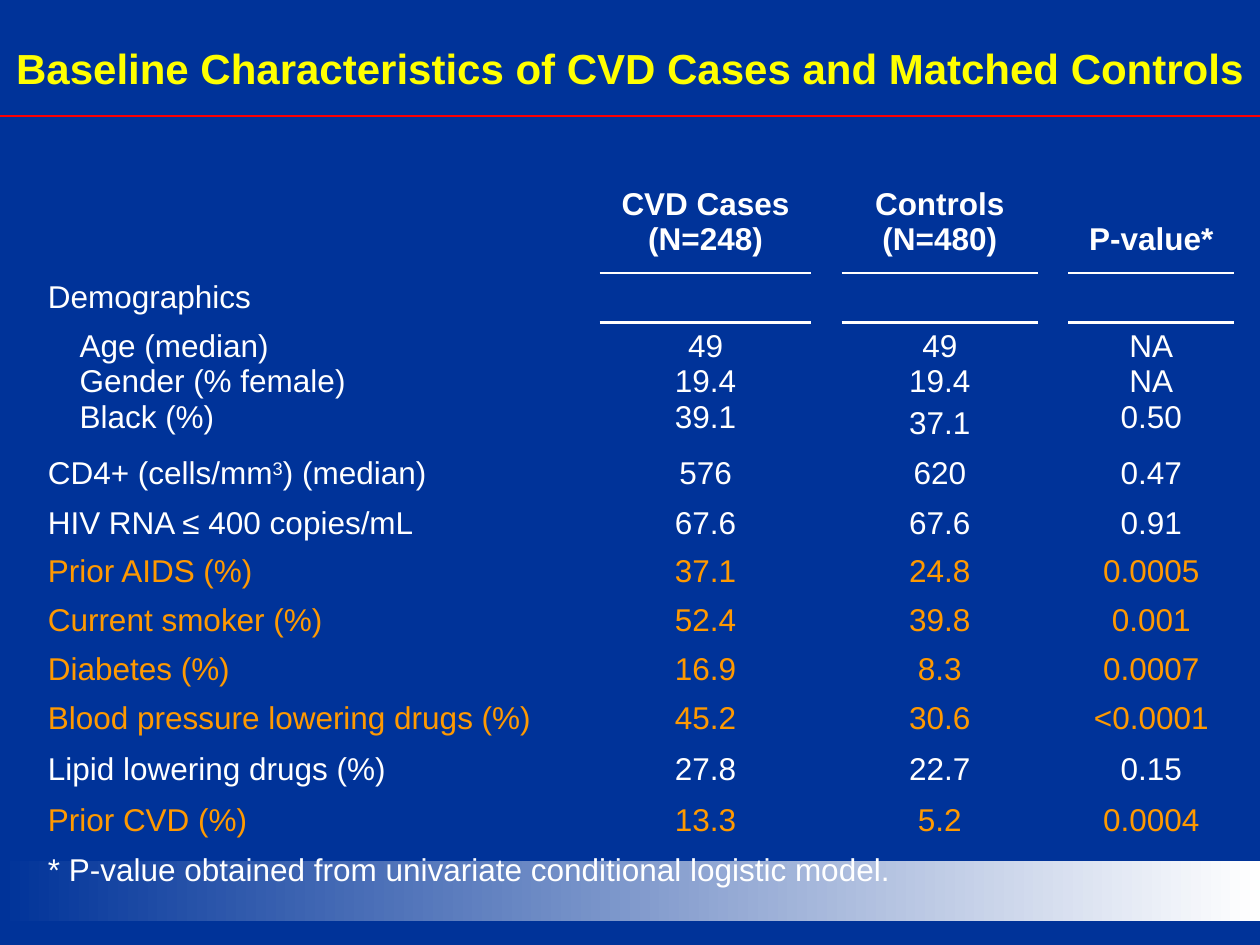
from dataclasses import dataclass
from lxml.etree import SubElement
from pptx import Presentation
from pptx.dml.color import RGBColor
from pptx.enum.shapes import MSO_CONNECTOR, MSO_SHAPE
from pptx.enum.text import MSO_ANCHOR, MSO_AUTO_SIZE, PP_ALIGN
from pptx.oxml import parse_xml
from pptx.oxml.ns import nsdecls, qn
from pptx.slide import Slide
from pptx.util import Cm, Pt

NAVY = RGBColor(0x00, 0x33, 0x99)
WHITE = RGBColor(0xFF, 0xFF, 0xFF)
YELLOW = RGBColor(0xFF, 0xFF, 0x00)
ORANGE = RGBColor(0xFF, 0x99, 0x00)
RED = RGBColor(0xFF, 0x00, 0x00)
PLAIN = "{2D5ABB26-0587-4C30-8999-92F81FD0307C}"  # no style, no grid

COLS = [10.77, 0.58, 4.27, 0.58, 3.96, 0.58, 3.35]
HIGH = [1.9, 0.99, 2.57, 0.99, 0.94, 0.97, 0.97, 0.99] + [1.02] * 4
# Lists hold paragraphs; carets enclose superscripts.
ROWS = [
    (WHITE, "", "CVD Cases\n(N=248)", "Controls\n(N=480)", "P-value*"),
    (WHITE, "Demographics", "", "", ""),
    (WHITE, "Age (median)\nGender (% female)\nBlack (%)", "49\n19.4\n39.1",
     ["49\n19.4", "37.1"], "NA\nNA\n0.50"),
    (WHITE, "CD4+ (cells/mm^3^) (median)", "576", "620", "0.47"),
    (WHITE, "HIV RNA ≤ 400 copies/mL", "67.6", "67.6", "0.91"),
    (ORANGE, "Prior AIDS (%)", "37.1", "24.8", "0.0005"),
    (ORANGE, "Current smoker (%)", "52.4", "39.8", "0.001"),
    (ORANGE, "Diabetes (%)", "16.9", "8.3", "0.0007"),
    (ORANGE, "Blood pressure lowering drugs (%)", "45.2", "30.6", "<0.0001"),
    (WHITE, "Lipid lowering drugs (%)", "27.8", "22.7", "0.15"),
    (ORANGE, "Prior CVD (%)", "13.3", "5.2", "0.0004"),
    (WHITE, "* P-value obtained from univariate conditional logistic model.",
     "", "", ""),
]


def put(item, form):
    for name, value in form.items():
        setattr(item, name, value)


def edge(cell, side):
    """Draw a white rule on one side of a cell (lnT or lnB)."""
    props = cell._tc.get_or_add_tcPr()
    line = parse_xml(
        f'<a:{side} {nsdecls("a")} w="{Pt(1.5)}"><a:solidFill>'
        f'<a:srgbClr val="{WHITE}"/></a:solidFill></a:{side}>')
    props.insert(0, line)


@dataclass
class Deck:
    slide: Slide
    face: str = "Arial"

    def label(self, frame, text, size, tone, bold=False, align=PP_ALIGN.LEFT):
        paras = text if isinstance(text, list) else [text]
        for i, para in enumerate(paras):
            p = frame.add_paragraph() if i else frame.paragraphs[0]
            p.alignment = align
            if i:
                p.space_before = Pt(size * 0.2)
            for j, line in enumerate(para.split("\n")):
                if j:
                    p.add_line_break()
                for k, part in enumerate(line.split("^")):
                    run = p.add_run()
                    run.text = part
                    put(run.font, {"name": self.face, "size": Pt(size),
                                   "bold": bold})
                    run.font.color.rgb = tone
                    if k % 2:
                        run.font._element.set("baseline", "30000")

    def title(self, text):
        box = self.slide.shapes.title
        put(box, {"left": Cm(0), "top": Cm(0.25),
                  "width": Cm(25.4), "height": Cm(3.18)})
        put(box.text_frame, {
            "margin_left": 0, "margin_right": 0, "margin_top": Cm(0.13),
            "margin_bottom": Cm(1.1), "word_wrap": True,
            "auto_size": MSO_AUTO_SIZE.NONE,
            "vertical_anchor": MSO_ANCHOR.MIDDLE})
        self.label(box.text_frame, text, 24, YELLOW, True, PP_ALIGN.CENTER)

    def band(self, top, high):
        """Fade from navy to white across the foot of the slide."""
        bar = self.slide.shapes.add_shape(
            MSO_SHAPE.RECTANGLE, Cm(0), Cm(top), Cm(25.4), Cm(high))
        bar.shadow.inherit = False
        bar.line.fill.background()
        bar.fill.gradient()
        bar.fill.gradient_angle = 0
        for stop, tone, place in zip(bar.fill.gradient_stops,
                                     (NAVY, WHITE), (0, 1)):
            stop.color.rgb = tone
            stop.position = place

    def rule(self, top):
        line = self.slide.shapes.add_connector(
            MSO_CONNECTOR.STRAIGHT, Cm(0), Cm(top), Cm(25.4), Cm(top))
        line.line.color.rgb = RED
        line.line.width = Pt(0.75)
        SubElement(line._element.spPr, qn("a:effectLst"))

    def table(self, left, top):
        grid = self.slide.shapes.add_table(
            len(ROWS), len(COLS), Cm(left), Cm(top),
            Cm(sum(COLS)), Cm(sum(HIGH))).table
        put(grid, {"first_row": False, "horz_banding": False})
        grid._tbl.tblPr.find(qn("a:tableStyleId")).text = PLAIN
        for col, wide in zip(grid.columns, COLS):
            col.width = Cm(wide)
        for row, high in zip(grid.rows, HIGH):
            row.height = Cm(high)
        for cell in grid.iter_cells():
            put(cell, {"margin_top": Cm(0.13), "margin_bottom": Cm(0.08)})
            cell.fill.background()
        for r, (tone, *texts) in enumerate(ROWS):
            for c, text in enumerate(texts):
                cell = grid.cell(r, c * 2)
                if text:
                    align = PP_ALIGN.CENTER if c else PP_ALIGN.LEFT
                    self.label(cell.text_frame, text, 18, tone, r == 0, align)
                if c and r < 2:
                    edge(cell, "lnT" if r else "lnB")
                if r == 0:
                    put(cell, {"margin_bottom": Cm(0.32),
                               "vertical_anchor": MSO_ANCHOR.BOTTOM})
        first = grid.cell(2, 0).text_frame.paragraphs[0]
        first._p.get_or_add_pPr().set("marL", str(Cm(0.64)))
        last = len(ROWS) - 1
        grid.cell(last, 0).merge(grid.cell(last, len(COLS) - 1))


def main():
    show = Presentation()
    put(show, {"slide_width": Cm(25.4), "slide_height": Cm(19.05)})
    slide = show.slides.add_slide(show.slide_layouts[5])
    slide.background.fill.solid()
    slide.background.fill.fore_color.rgb = NAVY
    deck = Deck(slide)
    deck.band(17.35, 1.22)
    deck.title("Baseline Characteristics of CVD Cases and Matched Controls")
    deck.table(0.71, 3.61)
    deck.rule(2.34)
    show.save("out.pptx")


if __name__ == "__main__":
    main()
